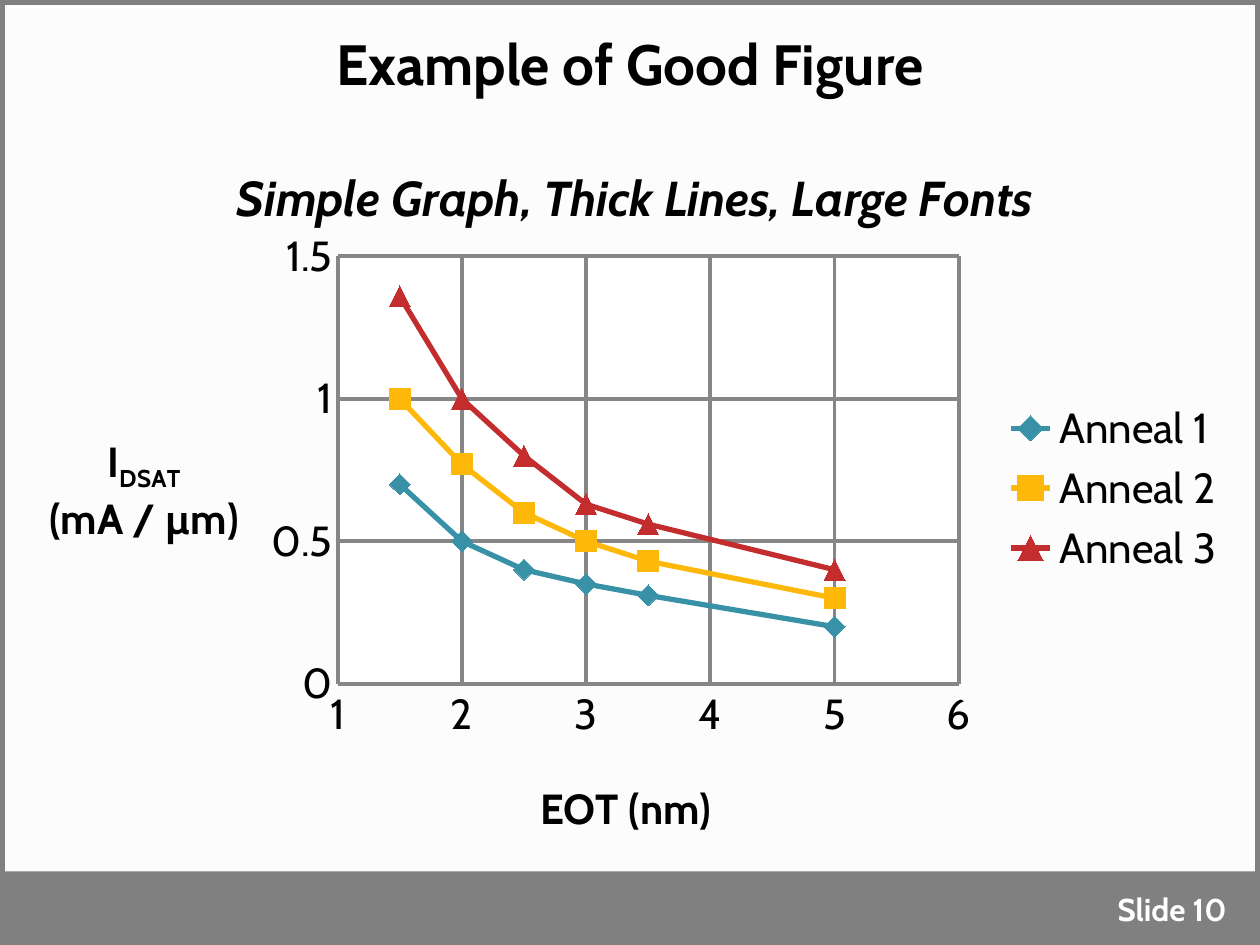
from lxml.etree import SubElement
from pptx import Presentation
from pptx.chart.data import XyChartData
from pptx.dml.color import RGBColor
from pptx.enum.chart import XL_CHART_TYPE, XL_LEGEND_POSITION, XL_MARKER_STYLE, XL_TICK_MARK
from pptx.enum.shapes import MSO_SHAPE
from pptx.enum.text import MSO_ANCHOR, PP_ALIGN
from pptx.oxml import parse_xml
from pptx.oxml.ns import nsdecls, qn
from pptx.util import Inches, Pt

COLORS = {"back": "FCFCFC", "gray": "808080", "grid": "868686", "black": "000000", "white": "FFFFFF",
          "teal": "3891A7", "amber": "FEB80A", "red": "C32D2E"}
EOT = (1.5, 2, 2.5, 3, 3.5, 5)
ANNEALS = (
    ("Anneal 1", (0.7, 0.5, 0.4, 0.35, 0.31, 0.2), "teal", XL_MARKER_STYLE.DIAMOND),
    ("Anneal 2", (1, 0.77, 0.6, 0.5, 0.43, 0.3), "amber", XL_MARKER_STYLE.SQUARE),
    ("Anneal 3", (1.36, 1, 0.8, 0.63, 0.56, 0.4), "red", XL_MARKER_STYLE.TRIANGLE),
)


class Deck:
    """Slide builder on a grid of 60 columns by 45 rows."""

    def __init__(self, font="Cabin"):
        self.prs = Presentation()
        self.prs.slide_width, self.prs.slide_height = Inches(10), Inches(7.5)
        self.font = font
        self.slide = self.prs.slides.add_slide(self.prs.slide_layouts[6])
        self.paint(self.slide.background.fill, "back")

    def paint(self, fill, color):
        fill.solid()
        fill.fore_color.rgb = RGBColor.from_string(COLORS[color])

    def stroke(self, line, color, width):
        self.paint(line.fill, color)
        line.width = Pt(width)

    def style(self, font, size, color="black", bold=False, italic=False):
        font.name, font.size, font.bold, font.italic = self.font, Pt(size), bold, italic
        font.color.rgb = RGBColor.from_string(COLORS[color])

    def box(self, *cells):
        return [int(Inches(1) * cell / 6) for cell in cells]

    def rect(self, cells, fill=None, line=None):
        sp = self.slide.shapes.add_shape(MSO_SHAPE.RECTANGLE, *self.box(*cells))
        sp.shadow.inherit = False
        if fill:
            self.paint(sp.fill, fill)
        else:
            sp.fill.background()
        if line:
            self.stroke(sp.line, line, 6)
        else:
            sp.line.fill.background()

    def text(self, cells, words, size, color, align):
        tf = self.slide.shapes.add_textbox(*self.box(*cells)).text_frame
        tf.word_wrap, tf.vertical_anchor = True, MSO_ANCHOR.MIDDLE
        p = tf.paragraphs[0]
        p.text, p.alignment = words, align
        self.style(p.font, size, color, bold=True)

    def place(self, element, index, **shares):
        old = element.find(qn("c:layout"))
        if old is not None:
            index = element.index(old)
            element.remove(old)
        layout = parse_xml(f"<c:layout {nsdecls('c')}><c:manualLayout/></c:layout>")
        element.insert(index, layout)
        modes = {"xMode": "edge", "yMode": "edge"}
        if index == 0:
            modes = {"layoutTarget": "inner", **modes}
        for tag, value in {**modes, **shares}.items():
            SubElement(layout[0], qn(f"c:{tag}")).set("val", str(value))

    def heading(self, owner, lines, size, x, y, italic=False):
        title = owner.chart_title if hasattr(owner, "chart_title") else owner.axis_title
        tf = title.text_frame
        for i, line in enumerate(lines):
            p = tf.add_paragraph() if i else tf.paragraphs[0]
            self.style(p.font, size, bold=True, italic=italic)
            for words, baseline in line:
                r = p.add_run()
                r.text = words
                self.style(r.font, size, bold=True, italic=italic)
                if baseline:
                    r._r.get_or_add_rPr().set("baseline", str(baseline))
        tf._txBody.bodyPr.set("rot", "0")
        self.place(title._element, 1, x=x, y=y)

    def axis(self, axis, low, high, step):
        axis.minimum_scale, axis.maximum_scale, axis.major_unit = low, high, step
        axis.major_tick_mark = axis.minor_tick_mark = XL_TICK_MARK.NONE
        axis.has_major_gridlines = True
        axis.tick_labels.number_format, axis.tick_labels.number_format_is_linked = "General", False
        self.style(axis.tick_labels.font, 24)
        for line in (axis.format.line, axis.major_gridlines.format.line):
            self.stroke(line, "grid", 2.25)

    def scatter(self, cells):
        data = XyChartData()
        for name, values, *_ in ANNEALS:
            series = data.add_series(name)
            for x, y in zip(EOT, values):
                series.add_data_point(x, y)
        chart = self.slide.shapes.add_chart(XL_CHART_TYPE.XY_SCATTER_LINES, *self.box(*cells), data).chart
        self.style(chart.font, 24)
        plot = chart.plots[0]
        plot.vary_by_categories = False
        for series, (_, _, color, marker) in zip(plot.series, ANNEALS):
            series.smooth = False
            self.stroke(series.format.line, color, 3)
            series.marker.style, series.marker.size = marker, 12
            self.paint(series.marker.format.fill, color)
            series.marker.format.line.fill.background()
        self.axis(chart.category_axis, 1, 6, 1)
        self.axis(chart.value_axis, 0, 1.5, 0.5)
        self.heading(chart, [[("Simple Graph, Thick Lines, Large Fonts", 0)]], 28, 0.17, 0.04, True)
        self.heading(chart.category_axis, [[("EOT (nm)", 0)]], 24, 0.42, 0.89)
        self.heading(chart.value_axis, [[("I", 0), ("DSAT", -25000)], [("(mA / µm)", 0)]], 24, 0.02, 0.42)
        chart.has_legend = True
        legend = chart.legend
        legend.position, legend.include_in_layout = XL_LEGEND_POSITION.RIGHT, False
        self.style(legend.font, 24)
        self.place(legend._element, 1, x=0.81, y=0.37, w=0.18, h=0.26)
        area = chart._chartSpace.chart.plotArea
        self.place(area, 0, x=0.26, y=0.18, w=0.51, h=0.59)
        area.append(parse_xml(
            f"<c:spPr {nsdecls('c', 'a')}><a:solidFill><a:srgbClr val='{COLORS['white']}'/></a:solidFill>"
            "<a:ln><a:noFill/></a:ln></c:spPr>"))


def main():
    deck = Deck()
    deck.rect((0, 41.5, 60, 3.5), fill="gray")
    deck.rect((0, 0, 60, 45), line="gray")
    deck.text((1, 1, 58, 4), "Example of Good Figure", 32.4, "black", PP_ALIGN.CENTER)
    deck.scatter((1, 6, 58, 34.5))
    deck.text((43, 42.1, 16, 2.4), "Slide 10", 18, "white", PP_ALIGN.RIGHT)
    deck.prs.save("out.pptx")


if __name__ == "__main__":
    main()
